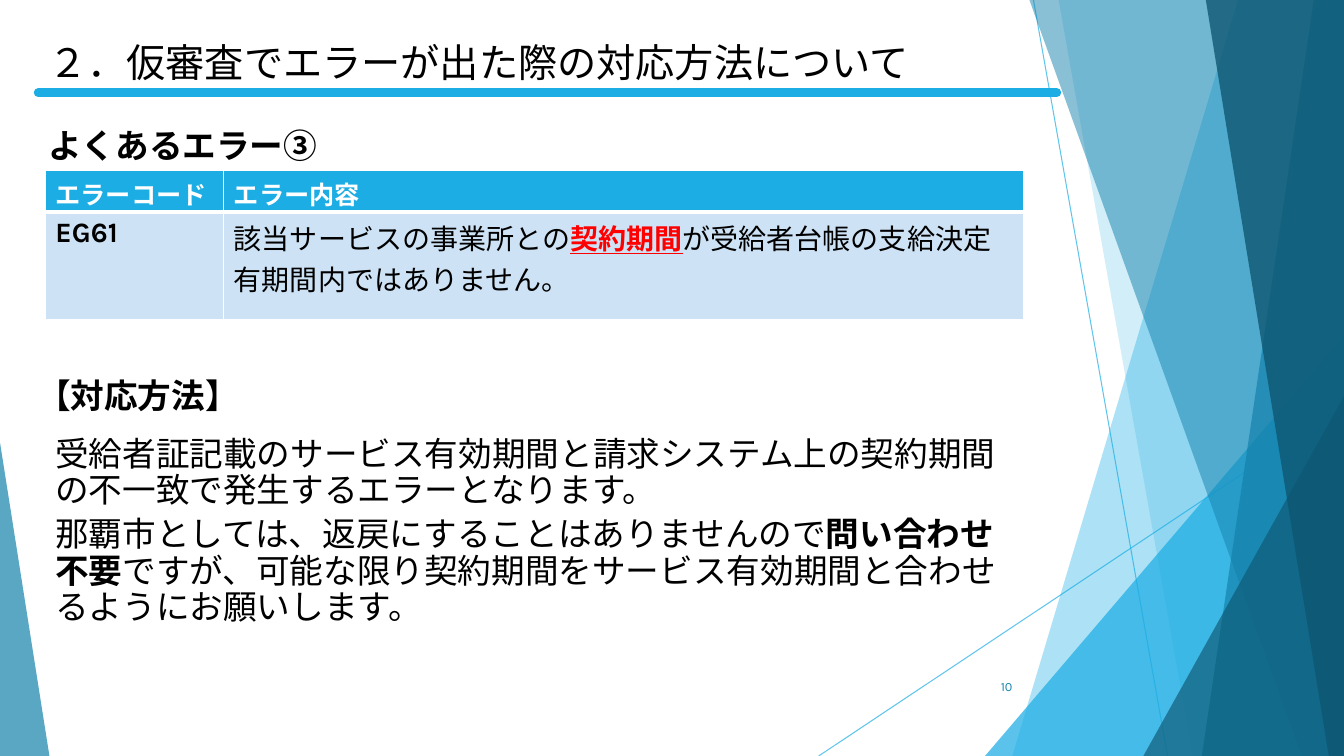
from lxml import etree
from pptx import Presentation
from pptx import util as u
from pptx.dml.color import RGBColor
from pptx.enum import lang, shapes, text
from pptx.oxml import ns

BLUE, TEAL, NAVY = "1CADE4", "1482AC", "0E5772"
BLACK, WHITE, RED, PALE = "000000", "FFFFFF", "FF0000", "CDE3F5"
W, H = 13.33, 7.5
I = u.Inches


def color(value):
    return RGBColor.from_string(value)


def sub(parent, tag, **attrs):
    return etree.SubElement(parent, ns.qn(tag), attrs)


def set_alpha(sp, percent):
    for clr in sp._element.spPr.iter(ns.qn("a:srgbClr")):
        sub(clr, "a:alpha", val=str(percent * 1000))


class Deck:
    heading_font = "Karla"
    body_font = "Arial"

    def __init__(self, prs):
        self.s = prs.slides.add_slide(prs.slide_layouts[5])

    def line(self, x1, y1, x2, y2, width, alpha=100, cap="flat"):
        c = self.s.shapes.add_connector(
            shapes.MSO_CONNECTOR.STRAIGHT, I(x1), I(y1), I(x2), I(y2))
        c.line.color.rgb = color(BLUE)
        c.line.width = u.Pt(width)
        c.line._get_or_add_ln().set("cap", cap)
        set_alpha(c, alpha)
        sub(c._element.spPr, "a:effectLst")

    def paint(self, sp, fill, alpha):
        sp.shadow.inherit = False
        sp.fill.solid()
        sp.fill.fore_color.rgb = color(fill)
        set_alpha(sp, alpha)
        sp.line.fill.background()

    def band(self, top_x, bottom_x, fill, alpha):
        """Fill from a slanted edge to the right side of the slide."""
        fb = self.s.shapes.build_freeform(I(top_x), 0)
        fb.add_line_segments([(I(W), 0), (I(W), I(H)), (I(bottom_x), I(H))])
        self.paint(fb.convert_to_shape(), fill, alpha)

    def triangle(self, left, top, width, apex, fill, alpha):
        sp = self.s.shapes.add_shape(
            shapes.MSO_SHAPE.ISOSCELES_TRIANGLE,
            I(left), I(top), I(width), I(H - top))
        sp.adjustments[0] = apex
        self.paint(sp, fill, alpha)

    def run(self, p, words, size, font, bold=False, fill=BLACK, underline=False):
        r = p.add_run()
        r.text = words
        f = r.font
        f.size, f.name, f.bold, f.underline = u.Pt(size), font, bold, underline
        f.color.rgb = color(fill)
        f.language_id = lang.MSO_LANGUAGE_ID.JAPANESE

    def frame(self, sp, anchor=text.MSO_ANCHOR.TOP):
        tf = sp.text_frame
        tf.word_wrap = True
        tf.auto_size = text.MSO_AUTO_SIZE.NONE
        tf.vertical_anchor = anchor
        return tf

    def box(self, left, top, width, height, anchor=text.MSO_ANCHOR.TOP):
        sp = self.s.shapes.add_textbox(I(left), I(top), I(width), I(height))
        return self.frame(sp, anchor)

    def title(self, words):
        sp = self.s.shapes.title
        sp.left, sp.top, sp.width, sp.height = I(0.38), I(0.33), I(9.41), I(0.57)
        p = self.frame(sp).paragraphs[0]
        p.alignment = text.PP_ALIGN.LEFT
        self.run(p, words, 28, self.heading_font)

    def heading(self, left, top, words):
        p = self.box(left, top, 10.31, 0.5).paragraphs[0]
        self.run(p, words, 24, self.heading_font, True)

    def body(self, left, top, width, height, paragraphs):
        """Each paragraph is a list of (words, bold) runs."""
        tf = self.box(left, top, width, height)
        for i, runs in enumerate(paragraphs):
            p = tf.add_paragraph() if i else tf.paragraphs[0]
            p.line_spacing = 0.9
            if i:
                p.space_before = u.Pt(5.7)
            for words, bold in runs:
                self.run(p, words, 24, self.body_font, bold)

    def number(self, words):
        p = self.box(9.39, 6.61, 0.75, 0.4, text.MSO_ANCHOR.MIDDLE).paragraphs[0]
        p.alignment = text.PP_ALIGN.RIGHT
        self.run(p, words, 9, self.heading_font, fill=TEAL)

    def borders(self, cell, bottom):
        tc_pr = cell._tc.get_or_add_tcPr()
        sides = (("a:lnL", 1), ("a:lnR", 1), ("a:lnT", 1), ("a:lnB", bottom))
        for i, (tag, width) in enumerate(sides):
            ln = etree.Element(ns.qn(tag), w=str(u.Pt(width)))
            sub(sub(ln, "a:solidFill"), "a:srgbClr", val=WHITE)
            tc_pr.insert(i, ln)

    def table(self, left, top, cols, rows, cells):
        """Each cell is a list of (words, run style) pairs."""
        t = self.s.shapes.add_table(
            len(rows), len(cols), I(left), I(top), I(sum(cols)), I(sum(rows))).table
        for col, width in zip(t.columns, cols):
            col.width = I(width)
        for i, height in enumerate(rows):
            t.rows[i].height = I(height)
            for j, runs in enumerate(cells[i]):
                cell = t.cell(i, j)
                cell.margin_bottom = 0
                cell.fill.solid()
                cell.fill.fore_color.rgb = color(PALE if i else BLUE)
                self.borders(cell, 1 if i else 3)
                for words, style in runs:
                    self.run(cell.text_frame.paragraphs[0], words, **style)


def main():
    prs = Presentation()
    prs.slide_width, prs.slide_height = I(W), I(H)
    d = Deck(prs)

    d.line(10.25, 0, 11.58, H, 0.75, 70)
    d.line(W, 4.03, 8.12, H, 0.75, 70)
    d.band(12.28, 10.04, BLUE, 36)
    d.band(10.5, 11.83, BLUE, 20)
    d.triangle(9.77, 3.33, 3.56, 1, BLUE, 72)
    d.band(10.21, 12.91, TEAL, 50)
    d.band(13.03, 11.92, TEAL, 70)
    d.band(11.96, 13.18, NAVY, 80)
    d.triangle(11.34, 3.93, 1.99, 1, NAVY, 66)
    d.triangle(0, 4.39, 0.49, 0, TEAL, 70)

    d.line(0.38, 0.92, 10.48, 0.92, 6.5, cap="rnd")
    d.number("10")
    d.title("２．仮審査でエラーが出た際の対応方法について")
    d.heading(0.38, 1.19, "よくあるエラー③")
    d.body(0.45, 4.29, 9.59, 2.01, [
        [("受給者証記載のサービス有効期間と請求システム上の契約期間の不一致で"
          "発生するエラーとなります。", False)],
        [("那覇市としては、返戻にすることはありませんので", False),
         ("問い合わせ不要", True),
         ("ですが、可能な限り契約期間をサービス有効期間と合わせるように"
          "お願いします。", False)],
    ])
    d.heading(0.27, 3.67, "【対応方法】")

    head = dict(size=18, font=d.heading_font, bold=True, fill=WHITE)
    code = dict(size=20, font=d.heading_font, bold=True)
    plain = dict(size=20, font=d.body_font)
    key = dict(plain, bold=True, fill=RED, underline=True)
    d.table(0.45, 1.69, [1.77, 7.93], [0.41, 1.07], [
        [[("エラーコード", head)], [("エラー内容", head)]],
        [[("EG61", code)],
         [("該当サービスの事業所との", plain), ("契約期間", key),
          ("が受給者台帳の支給決定有期間内ではありません。", plain)]],
    ])
    prs.save("out.pptx")


if __name__ == "__main__":
    main()
